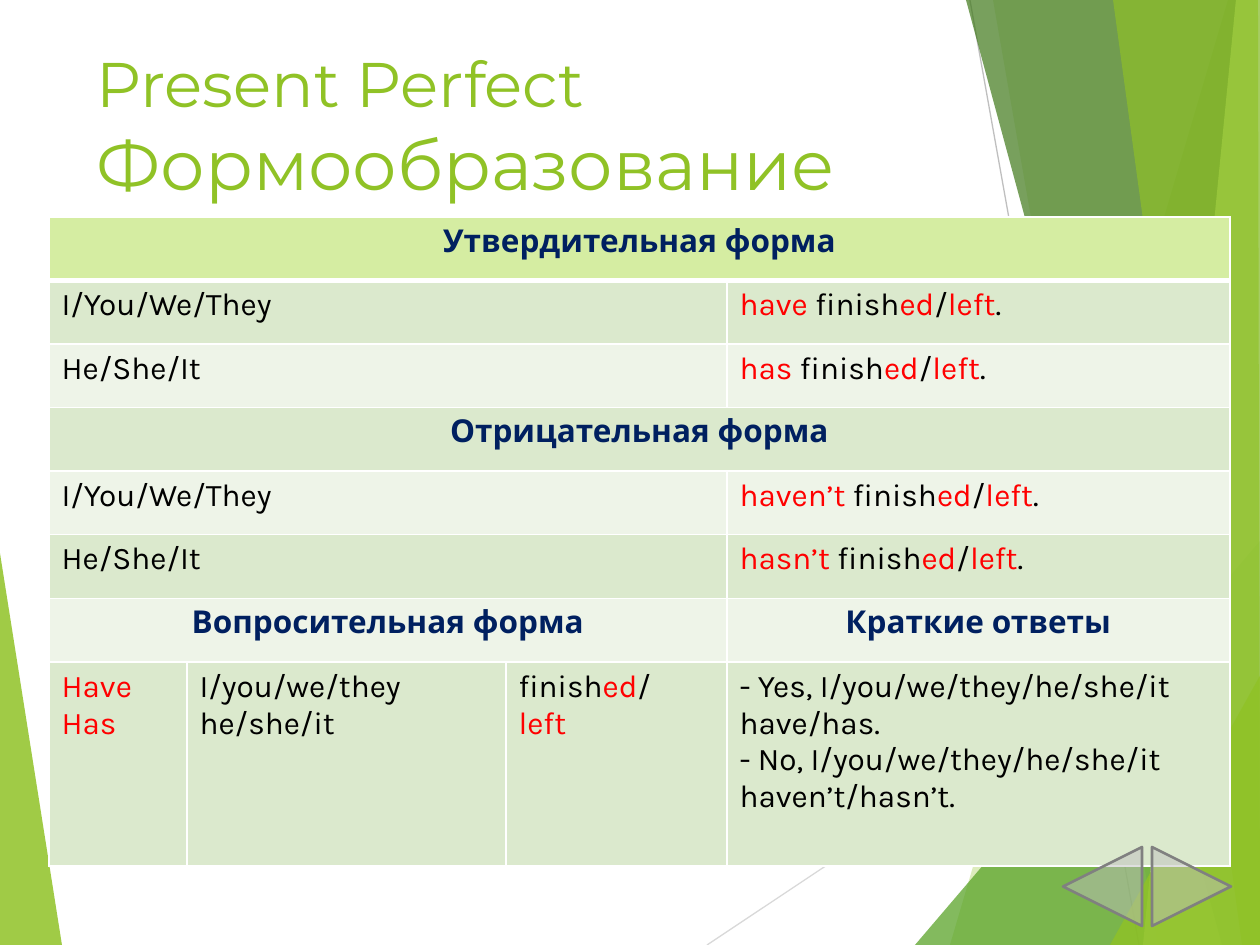
from dataclasses import dataclass

from lxml import etree
from pptx import Presentation
from pptx import util as u
from pptx.dml.color import RGBColor
from pptx.enum import shapes, text
from pptx.oxml.ns import qn

SCALE = 914400 / 126  # EMU per px
WIDTH, HEIGHT = 1260, 945

WHITE = RGBColor(0xFF, 0xFF, 0xFF)
BLACK = RGBColor(0, 0, 0)
RED = RGBColor(0xFF, 0, 0)
NAVY = RGBColor(0, 0x20, 0x60)
GREEN = RGBColor(0x90, 0xC2, 0x26)
MID_GREEN = RGBColor(0x54, 0xA0, 0x21)
DARK_GREEN = RGBColor(0x3F, 0x78, 0x19)
LIME = RGBColor(0xC0, 0xE4, 0x74)
HEADER_FILL = RGBColor(0xD5, 0xED, 0xA2)
BAND_DARK = RGBColor(0xDB, 0xE9, 0xCD)
BAND_LIGHT = RGBColor(0xEE, 0xF4, 0xE8)
PALE_GRAY = RGBColor(0xD9, 0xD9, 0xD9)
LIGHT_GRAY = RGBColor(0xBF, 0xBF, 0xBF)
GRAY = RGBColor(0x80, 0x80, 0x80)


@dataclass
class Facet:
    points: list[tuple[int, int]]
    color: RGBColor
    opacity: int


@dataclass
class Ray:
    start: tuple[int, int]
    end: tuple[int, int]
    color: RGBColor


@dataclass
class TableCell:
    content: str  # parts in [brackets] are red, each line is a paragraph
    span: int = 1
    heading: bool = False


LEFT_FACET = Facet([(0, 553), (62, HEIGHT), (0, HEIGHT)], GREEN, 85)
RAYS = [
    Ray((707, 945), (1261, 576), PALE_GRAY),
    Ray((970, 0), (1139, 945), LIGHT_GRAY),
]
RIGHT_FACETS = [
    Facet([(1228, 0), (950, 945), (1262, 945), (1261, 0)], GREEN, 30),
    Facet([(993, 0), (1158, 945), (1261, 945), (1261, 0)], GREEN, 20),
    Facet([(915, 945), (1260, 541), (1261, 945)], MID_GREEN, 72),
    Facet([(966, 0), (1222, 945), (1261, 945), (1261, 0)], DARK_GREEN, 70),
    Facet([(1236, 0), (1143, 945), (1261, 945), (1260, 0)], LIME, 70),
    Facet([(1113, 0), (1242, 945), (1260, 945), (1258, 0)], GREEN, 65),
    Facet([(1110, 945), (1261, 674), (1261, 945)], GREEN, 80),
]

COLUMNS = [138, 319, 221, 503]
FORM_ROWS_HEIGHT, QUESTION_ROW_HEIGHT = 445, 204


def statement(subject: str, auxiliary: str) -> list[TableCell]:
    return [TableCell(subject, 3), TableCell(f"[{auxiliary}] finish[ed]/[left].")]


ROWS = [
    [TableCell("Утвердительная форма", 4, True)],
    statement("I/You/We/They", "have"),
    statement("He/She/It", "has"),
    [TableCell("Отрицательная форма", 4, True)],
    statement("I/You/We/They", "haven’t"),
    statement("He/She/It", "hasn’t"),
    [TableCell("Вопросительная форма", 3, True), TableCell("Краткие ответы", 1, True)],
    [
        TableCell("[Have]\n[Has]"),
        TableCell("I/you/we/they\nhe/she/it"),
        TableCell("finish[ed]/\n[left]"),
        TableCell("- Yes, I/you/we/they/he/she/it have/has.\n"
                  "- No, I/you/we/they/he/she/it haven’t/hasn’t."),
    ],
]


def px(length: float) -> u.Emu:
    return u.Emu(round(length * SCALE))


def fill_shape(shape, color: RGBColor, opacity: int) -> None:
    shape.shadow.inherit = False
    shape.fill.solid()
    shape.fill.fore_color.rgb = color
    color_element = shape.element.spPr.find(qn("a:solidFill"))[0]
    etree.SubElement(color_element, qn("a:alpha"), val=str(opacity * 1000))


def draw_facet(slide, facet: Facet) -> None:
    builder = slide.shapes.build_freeform(*facet.points[0], scale=SCALE)
    builder.add_line_segments(facet.points[1:], close=True)
    shape = builder.convert_to_shape()
    fill_shape(shape, facet.color, facet.opacity)
    shape.line.fill.background()


def draw_ray(slide, ray: Ray) -> None:
    ends = [px(value) for value in ray.start + ray.end]
    connector = slide.shapes.add_connector(shapes.MSO_CONNECTOR.STRAIGHT, *ends)
    connector.line.color.rgb = ray.color
    connector.line.width = u.Pt(0.75)
    etree.SubElement(connector.element.spPr, qn("a:effectLst"))


def set_borders(cell, widths: dict[str, float]) -> None:
    properties = cell._tc.get_or_add_tcPr()
    for index, (side, width) in enumerate(widths.items()):
        border = etree.Element(qn(f"a:ln{side}"), w=str(u.Pt(width)))
        fill = etree.SubElement(border, qn("a:solidFill"))
        etree.SubElement(fill, qn("a:srgbClr"), val=str(WHITE))
        properties.insert(index, border)


def write_cell(cell, content: TableCell) -> None:
    lines = content.content.split("\n")
    cell.text_frame.text = "\n".join("" for _ in lines)
    for paragraph, line in zip(cell.text_frame.paragraphs, lines):
        if content.heading:
            paragraph.alignment = text.PP_ALIGN.CENTER
        for index, part in enumerate(line.replace("]", "[").split("[")):
            if not part:
                continue
            run = paragraph.add_run()
            run.text = part
            run.font.name = "Karla"
            run.font.size = u.Pt(18)
            run.font.bold = content.heading
            plain = NAVY if content.heading else BLACK
            run.font.color.rgb = RED if index % 2 else plain


def draw_table(slide) -> None:
    row_heights = [FORM_ROWS_HEIGHT / 7] * 7 + [QUESTION_ROW_HEIGHT]
    frame = slide.shapes.add_table(len(ROWS), len(COLUMNS), px(49), px(217),
                                   px(sum(COLUMNS)), px(sum(row_heights)))
    table = frame.table
    table.first_row = table.horz_banding = False
    for column, width in zip(table.columns, COLUMNS):
        column.width = px(width)
    for row_index, contents in enumerate(ROWS):
        table.rows[row_index].height = px(row_heights[row_index])
        band = BAND_DARK if row_index % 2 else BAND_LIGHT
        for cell in table.rows[row_index].cells:
            cell.fill.solid()
            cell.fill.fore_color.rgb = band if row_index else HEADER_FILL
            set_borders(cell, {"L": 1, "R": 1, "T": 3 if row_index == 1 else 1,
                               "B": 1 if row_index else 3})
        column_index = 0
        for content in contents:
            cell = table.cell(row_index, column_index)
            column_index += content.span
            if content.span > 1:
                cell.merge(table.cell(row_index, column_index - 1))
            write_cell(cell, content)


def draw_arrow(slide, left: int, rotation: int) -> None:
    shape = slide.shapes.add_shape(shapes.MSO_SHAPE.ISOSCELES_TRIANGLE,
                                   px(left), px(847), px(79), px(79))
    shape.rotation = rotation
    fill_shape(shape, LIGHT_GRAY, 49)
    shape.line.color.rgb = GRAY
    shape.line.width = u.Pt(1.5)


def write_title(slide) -> None:
    title = slide.shapes.title
    title.left, title.top, title.width, title.height = px(84), px(34), px(875), px(181)
    title.text_frame.text = "Present Perfect\vФормообразование"
    title.text_frame.vertical_anchor = text.MSO_ANCHOR.MIDDLE
    paragraph = title.text_frame.paragraphs[0]
    paragraph.alignment = text.PP_ALIGN.LEFT
    for run, size in zip(paragraph.runs, (36, 40)):
        run.font.name = "Montserrat"
        run.font.size = u.Pt(size)
        run.font.color.rgb = GREEN
    line_break = paragraph._p.find(qn("a:br"))
    etree.SubElement(line_break, qn("a:rPr"), sz="3600")
    # Bring the title in front of the facets
    title.element.getparent().append(title.element)


def main() -> None:
    presentation = Presentation()
    presentation.slide_width, presentation.slide_height = px(WIDTH), px(HEIGHT)
    slide = presentation.slides.add_slide(presentation.slide_layouts[5])

    # Background facets and rays
    draw_facet(slide, LEFT_FACET)
    for ray in RAYS:
        draw_ray(slide, ray)
    for facet in RIGHT_FACETS:
        draw_facet(slide, facet)

    # Title, table and navigation arrows
    write_title(slide)
    draw_table(slide)
    draw_arrow(slide, 1152, 90)
    draw_arrow(slide, 1063, 270)
    presentation.save("out.pptx")


if __name__ == "__main__":
    main()
